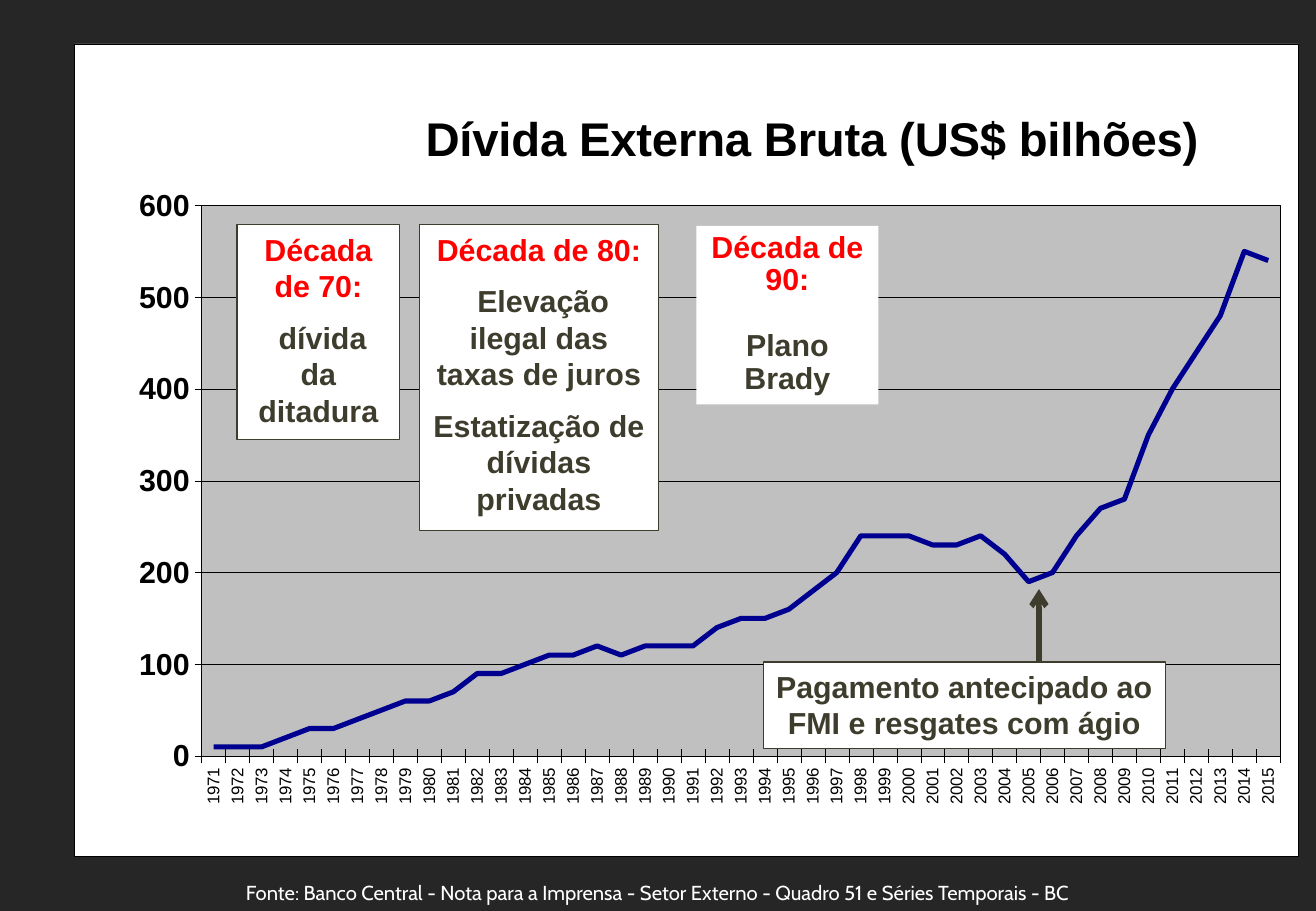
from dataclasses import dataclass

import pptx
import pptx.chart.chart
import pptx.chart.data
import pptx.dml.color
import pptx.dml.fill
import pptx.dml.line
import pptx.enum.chart
import pptx.enum.dml
import pptx.enum.shapes
import pptx.enum.text
import pptx.oxml
import pptx.oxml.ns
import pptx.slide
import pptx.text.text
import pptx.util

COLORS = {
    "background": "262626",
    "paper": "FFFFFF",
    "plot": "C0C0C0",
    "ink": "000000",
    "olive": "3E3D2D",
    "decade": "FF0000",
    "debt": "000090",
}
SLIDE_WIDTH = pptx.util.Inches(10.83)
SLIDE_HEIGHT = pptx.util.Inches(7.5)
COLUMNS = ROWS = 100
YEARS = range(1971, 2016)
DEBT = [
    10, 10, 10, 20, 30, 30, 40, 50, 60,
    60, 70, 90, 90, 100, 110, 110, 120, 110, 120,
    120, 120, 140, 150, 150, 160, 180, 200, 240, 240,
    240, 230, 230, 240, 220, 190, 200, 240, 270, 280,
    350, 400, 440, 480, 550, 540,
]


@dataclass(frozen=True)
class Area:
    column: float
    row: float
    columns: float
    rows: float


@dataclass(frozen=True)
class Line:
    text: str
    color: str = "olive"
    space_before: float = 9
    spacing: float = 1.0
    size: float = 18
    font: str = "Arial"
    bold: bool = True


@dataclass(frozen=True)
class Note:
    area: Area
    lines: tuple[Line, ...]
    fill: str | None = "paper"
    border: str | None = "olive"


CHART_AREA = Area(5.63, 4.8, 93.07, 89.2)
NOTES = (
    Note(
        Area(0, 96, 100, 4),
        (Line("Fonte: Banco Central - Nota para a Imprensa - Setor Externo - "
              "Quadro 51 e Séries Temporais - BC",
              "paper", 6, size=12, font="Cabin", bold=False),),
        fill=None, border=None,
    ),
    Note(
        Area(18.01, 24.67, 12.37, 23.6),
        (Line("Década de 70:", "decade"), Line(" dívida da ditadura")),
    ),
    Note(
        Area(31.86, 24.67, 18.19, 33.6),
        (Line("Década de 80:", "decade"),
         Line(" Elevação ilegal das taxas de juros"),
         Line("Estatização de dívidas privadas")),
    ),
    Note(
        Area(57.99, 72.67, 30.56, 9.47),
        (Line("Pagamento antecipado ao FMI e resgates com ágio"),),
    ),
    Note(
        Area(52.91, 24.8, 13.85, 19.6),
        (Line("Década de 90:", "decade", 0, 0.9),
         Line("Plano", space_before=19.5, spacing=0.9),
         Line("Brady", space_before=0, spacing=0.9)),
        border=None,
    ),
)


def across(columns: float) -> int:
    return round(SLIDE_WIDTH * columns / COLUMNS)


def down(rows: float) -> int:
    return round(SLIDE_HEIGHT * rows / ROWS)


def place(area: Area) -> tuple[int, int, int, int]:
    return across(area.column), down(area.row), across(area.columns), down(area.rows)


def rgb(name: str) -> pptx.dml.color.RGBColor:
    return pptx.dml.color.RGBColor.from_string(COLORS[name])


def paint(fill: pptx.dml.fill.FillFormat, color: str | None) -> None:
    if color is None:
        fill.background()
    else:
        fill.solid()
        fill.fore_color.rgb = rgb(color)


def stroke(line: pptx.dml.line.LineFormat, color: str | None, width: float) -> None:
    paint(line.fill, color)
    if color is not None:
        line.width = pptx.util.Pt(width)


def style_font(font: pptx.text.text.Font, name: str, size: float, color: str, bold: bool) -> None:
    font.name = name
    font.size = pptx.util.Pt(size)
    font.bold = bold
    font.color.rgb = rgb(color)


def chart_fill(fill: str, border: str) -> object:
    return pptx.oxml.parse_xml(
        f'<c:spPr {pptx.oxml.ns.nsdecls("c", "a")}>'
        f'<a:solidFill><a:srgbClr val="{COLORS[fill]}"/></a:solidFill>'
        f'<a:ln w="3175"><a:solidFill><a:srgbClr val="{COLORS[border]}"/></a:solidFill></a:ln>'
        '</c:spPr>'
    )


def chart_layout(target: str | None, **shares: float) -> object:
    inner = f'<c:layoutTarget val="{target}"/>' if target else ""
    modes = '<c:xMode val="edge"/><c:yMode val="edge"/>'
    values = "".join(f'<c:{key} val="{value}"/>' for key, value in shares.items())
    return pptx.oxml.parse_xml(
        f'<c:layout {pptx.oxml.ns.nsdecls("c")}><c:manualLayout>'
        f'{inner}{modes}{values}</c:manualLayout></c:layout>'
    )


def arrange_chart(chart: pptx.chart.chart.Chart) -> None:
    space = chart._chartSpace
    space.chart.addnext(chart_fill("paper", "ink"))
    plot_area = space.chart.plotArea
    title = chart.chart_title._element
    for parent in (plot_area, title):
        for layout in parent.findall(pptx.oxml.ns.qn("c:layout")):
            parent.remove(layout)
    plot_area.insert(0, chart_layout("inner", x=0.104, y=0.199, w=0.881, h=0.678))
    plot_area.append(chart_fill("plot", "ink"))
    title.find(pptx.oxml.ns.qn("c:tx")).addnext(chart_layout(None, x=0.28, y=0.07))


def add_debt_chart(slide: pptx.slide.Slide) -> None:
    data = pptx.chart.data.CategoryChartData(number_format="#,##0")
    data.categories = [str(year) for year in YEARS]
    data.add_series("Dívida externa bruta", DEBT)
    chart = slide.shapes.add_chart(
        pptx.enum.chart.XL_CHART_TYPE.LINE, *place(CHART_AREA), data
    ).chart
    style_font(chart.font, "Arial", 19, "ink", False)
    chart.has_legend = False
    chart.has_title = True
    run = chart.chart_title.text_frame.paragraphs[0].add_run()
    run.text = "Dívida Externa Bruta (US$ bilhões)"
    style_font(run.font, "Arial", 28, "ink", True)

    for axis, size, bold in ((chart.category_axis, 10, False), (chart.value_axis, 18, True)):
        style_font(axis.tick_labels.font, "Arial", size, "ink", bold)
        axis.major_tick_mark = pptx.enum.chart.XL_TICK_MARK.CROSS
        stroke(axis.format.line, "ink", 0.25)
    body = chart.category_axis._element.find(".//" + pptx.oxml.ns.qn("a:bodyPr"))
    body.set("rot", "-5400000")
    body.set("vert", "horz")
    values = chart.value_axis
    values.minimum_scale, values.maximum_scale, values.major_unit = 0, 600, 100
    stroke(values.major_gridlines.format.line, "ink", 0.25)

    plot = chart.plots[0]
    plot.vary_by_categories = False
    series = plot.series[0]
    series.smooth = False
    series.marker.style = pptx.enum.chart.XL_MARKER_STYLE.NONE
    stroke(series.format.line, "debt", 3)
    arrange_chart(chart)


def add_note(slide: pptx.slide.Slide, note: Note) -> None:
    shape = slide.shapes.add_shape(pptx.enum.shapes.MSO_SHAPE.RECTANGLE, *place(note.area))
    shape.shadow.inherit = False
    paint(shape.fill, note.fill)
    stroke(shape.line, note.border, 0.75)
    frame = shape.text_frame
    frame.word_wrap = True
    frame.auto_size = pptx.enum.text.MSO_AUTO_SIZE.SHAPE_TO_FIT_TEXT
    frame.vertical_anchor = pptx.enum.text.MSO_ANCHOR.TOP
    for index, line in enumerate(note.lines):
        paragraph = frame.add_paragraph() if index else frame.paragraphs[0]
        paragraph.alignment = pptx.enum.text.PP_ALIGN.CENTER
        paragraph.space_before = pptx.util.Pt(line.space_before)
        paragraph.line_spacing = line.spacing
        run = paragraph.add_run()
        run.text = line.text
        style_font(run.font, line.font, line.size, line.color, line.bold)


def add_payment_arrow(slide: pptx.slide.Slide) -> None:
    arrow = slide.shapes.add_connector(
        pptx.enum.shapes.MSO_CONNECTOR.STRAIGHT,
        across(78.95), down(72.67), across(78.95), down(64.67),
    )
    stroke(arrow.line, "olive", 3.25)
    namespace = pptx.oxml.ns.nsdecls("a")
    arrow.line._ln.append(pptx.oxml.parse_xml(f'<a:tailEnd {namespace} type="arrow"/>'))
    arrow._element.spPr.append(pptx.oxml.parse_xml(f"<a:effectLst {namespace}/>"))


def main() -> None:
    presentation = pptx.Presentation()
    presentation.slide_width = SLIDE_WIDTH
    presentation.slide_height = SLIDE_HEIGHT
    slide = presentation.slides.add_slide(presentation.slide_layouts[6])
    paint(slide.background.fill, "background")
    add_debt_chart(slide)
    for note in NOTES:
        add_note(slide, note)
    add_payment_arrow(slide)
    presentation.save("out.pptx")


if __name__ == "__main__":
    main()
